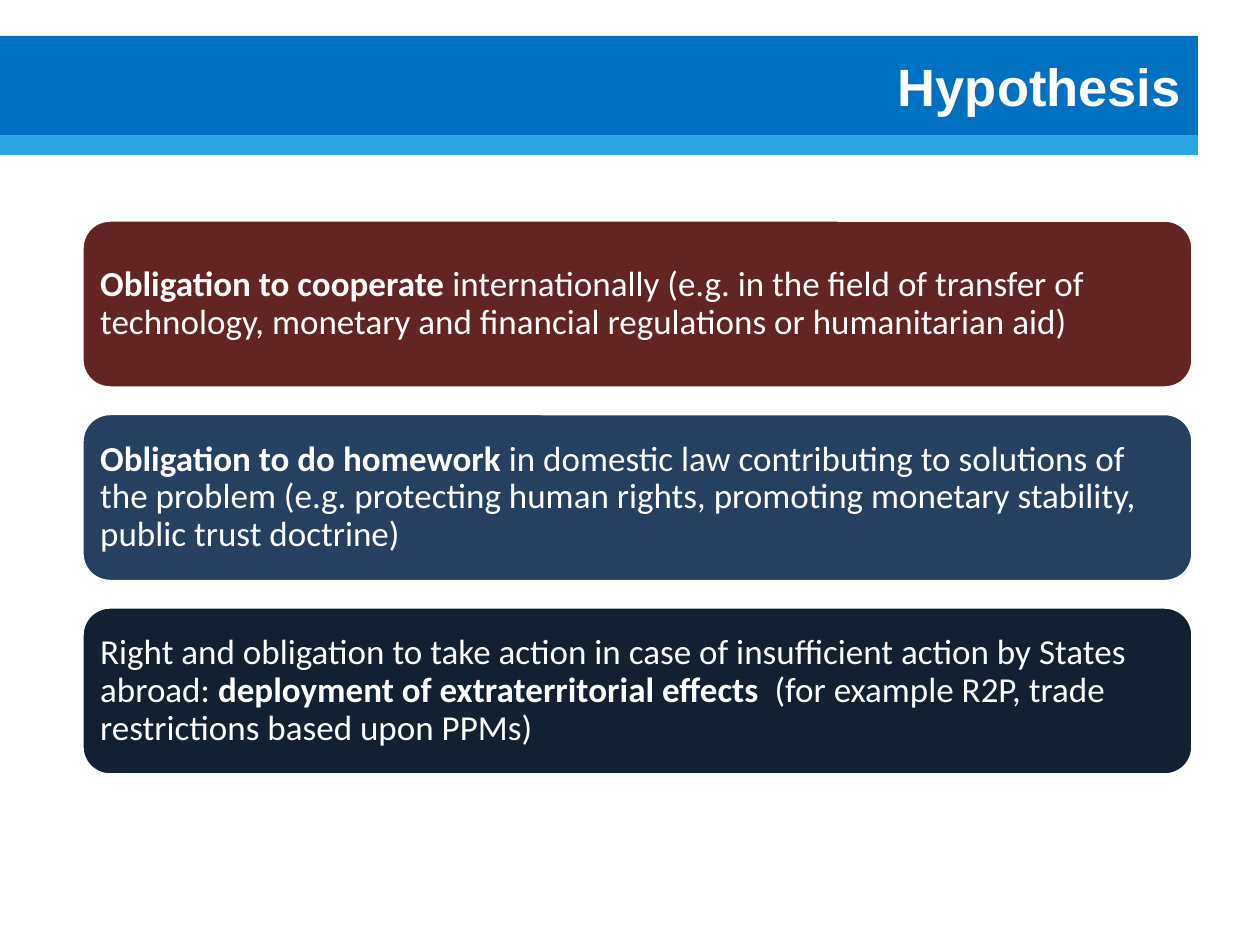
from pptx import Presentation
from pptx.dml.color import RGBColor
from pptx.enum.shapes import MSO_SHAPE
from pptx.enum.text import MSO_ANCHOR, PP_ALIGN
from pptx.util import Pt

SCALE = 914400 / 126
COLORS = {
    "white": "FFFFFF",
    "blue": "0070C0",
    "sky": "2AA5E2",
    "maroon": "632523",
    "navy": "254061",
    "night": "122031",
}
CARDS = [
    ("maroon", [
        ("Obligation to cooperate", True),
        (" internationally (e.g. in the field of transfer of technology, "
         "monetary and financial regulations or humanitarian aid)", False),
    ]),
    ("navy", [
        ("Obligation to do homework", True),
        (" in domestic law contributing to solutions of the problem "
         "(e.g. protecting human rights, promoting monetary stability, "
         "public trust doctrine)", False),
    ]),
    ("night", [
        ("Right and obligation to take action in case of insufficient "
         "action by States abroad: ", False),
        ("deployment of extraterritorial effects", True),
        ("  (for example R2P, trade restrictions based upon PPMs)", False),
    ]),
]


def px(n):
    return round(n * SCALE)


def color(name):
    return RGBColor.from_string(COLORS[name])


def add_box(slide, kind, box, fill):
    shape = slide.shapes.add_shape(kind, *map(px, box))
    shape.shadow.inherit = False
    shape.fill.solid()
    shape.fill.fore_color.rgb = color(fill)
    shape.line.fill.background()
    return shape


def add_text(shape, runs, font, size, align, inset):
    frame = shape.text_frame
    frame.word_wrap = True
    frame.vertical_anchor = MSO_ANCHOR.MIDDLE
    frame.margin_left = frame.margin_right = px(inset)
    frame.margin_top = frame.margin_bottom = px(10)
    para = frame.paragraphs[0]
    para.alignment = align
    for text, bold in runs:
        run = para.add_run()
        run.text = text
        run.font.name = font
        run.font.size = Pt(size)
        run.font.bold = bold
        run.font.color.rgb = color("white")
    return para


def add_header(slide, box, title):
    left, top, width, height = box
    strip = 20
    bar = height - strip
    add_box(slide, MSO_SHAPE.RECTANGLE, (left, top + bar, width, strip), "sky")
    band = add_box(slide, MSO_SHAPE.RECTANGLE, (left, top, width, bar), "blue")
    add_text(band, [(title, True)], "Arial", 30, PP_ALIGN.RIGHT, 17)


def add_cards(slide, box, cards):
    left, top, width, height = box
    tall = 168
    step = (height - tall) / (len(cards) - 1)
    for i, (fill, runs) in enumerate(cards):
        place = (left, top + i * step, width, tall)
        card = add_box(slide, MSO_SHAPE.ROUNDED_RECTANGLE, place, fill)
        card.line.color.rgb = color("white")
        card.line.width = Pt(2)
        para = add_text(card, runs, "Calibri", 20, PP_ALIGN.LEFT, 10)
        para.line_spacing = 0.9


def main():
    deck = Presentation()
    deck.slide_width = px(1260)
    deck.slide_height = px(945)
    slide = deck.slides.add_slide(deck.slide_layouts[6])
    add_header(slide, (0, 36, 1198, 119), "Hypothesis")
    add_cards(slide, (82, 220, 1111, 555), CARDS)
    deck.save("out.pptx")


if __name__ == "__main__":
    main()
